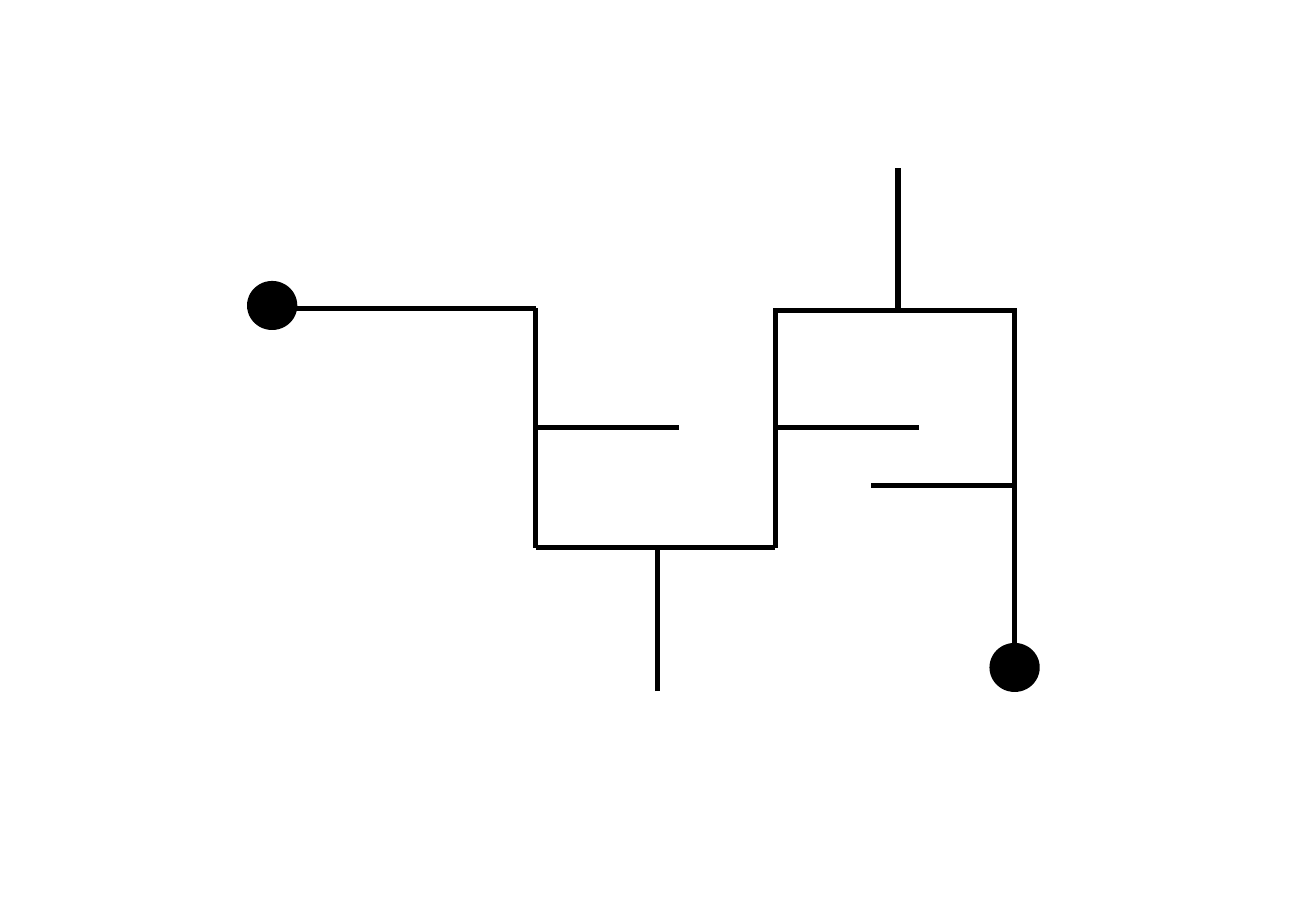
from pptx import Presentation
from pptx.dml.color import RGBColor
from pptx.enum import shapes
from pptx.oxml.ns import qn
from pptx.util import Inches, Pt
from lxml import etree

BLACK = RGBColor(0, 0, 0)

LEFT, MIDDLE, RIGHT = 4.41, 6.38, 8.35
TOP, BOTTOM = 2.54, 4.51
ROOF = 2.56
BRANCH = 1.18
BRANCH_Y = 3.52
DOT_WIDTH, DOT_HEIGHT = 0.4, 0.39
START_DOT = (2.04, 2.32)
END_DOT = (8.15, 5.3)

presentation = Presentation()
presentation.slide_width = Inches(10.83)
presentation.slide_height = Inches(7.5)
slide = presentation.slides.add_slide(presentation.slide_layouts[6])
diagram = slide.shapes.add_group_shape()

dots = []
for left, top in (START_DOT, END_DOT):
    dot = diagram.shapes.add_shape(
        shapes.MSO_SHAPE.FLOWCHART_CONNECTOR,
        Inches(left), Inches(top), Inches(DOT_WIDTH), Inches(DOT_HEIGHT))
    dot.shadow.inherit = False
    dot.fill.solid()
    dot.fill.fore_color.rgb = BLACK
    dot.line.color.rgb = BLACK
    dot.line.width = Pt(1)
    dots.append(dot)

backbone = [
    (START_DOT[0] + DOT_WIDTH, TOP, LEFT, TOP),
    (LEFT, BOTTOM, LEFT, TOP),
    (LEFT, BOTTOM, MIDDLE, BOTTOM),
    (MIDDLE, BOTTOM, MIDDLE, TOP),
    (MIDDLE, ROOF, RIGHT, ROOF),
]
branches = [
    (LEFT, BRANCH_Y, LEFT + BRANCH, BRANCH_Y),
    (5.41, BOTTOM + BRANCH, 5.41, BOTTOM),
    (MIDDLE, BRANCH_Y, MIDDLE + BRANCH, BRANCH_Y),
    (7.39, ROOF, 7.39, ROOF - BRANCH),
    (RIGHT, 4, RIGHT - BRANCH, 4),
]
tail = (RIGHT, END_DOT[1], RIGHT, TOP)

for ends in backbone + branches + [tail]:
    line = diagram.shapes.add_connector(
        shapes.MSO_CONNECTOR.STRAIGHT, *[Inches(value) for value in ends])
    line.line.color.rgb = BLACK
    line.line.width = Pt(3)
    etree.SubElement(line._element.spPr, qn("a:effectLst"))
    if ends == tail:
        line.begin_connect(dots[1], 0)

presentation.save("out.pptx")
